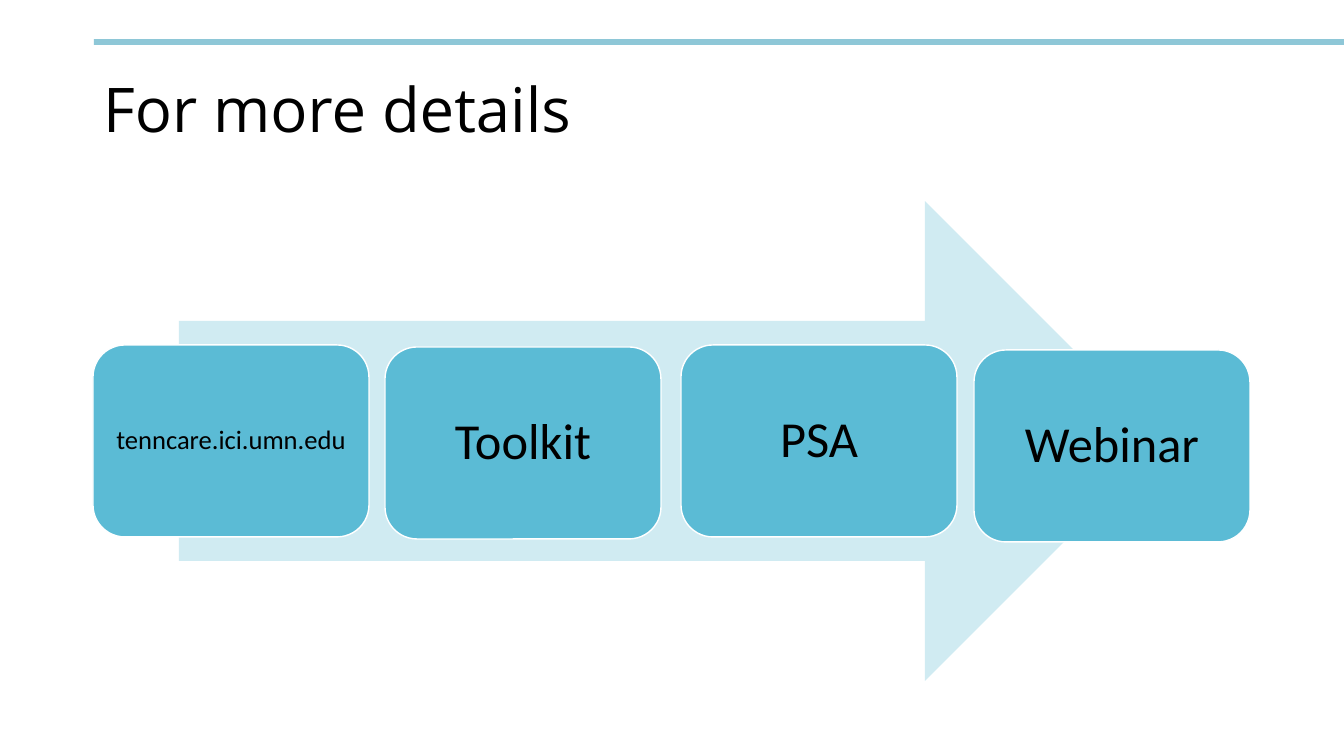
import pptx
import pptx.dml.color
import pptx.enum.shapes
import pptx.enum.text
import pptx.util

# Content: text, left, top, font size and text inset of each card
TITLE = "For more details"
CARDS = [
    ("tenncare.ici.umn.edu", 93, 345, 19, 8),
    ("Toolkit", 385, 347, 36, 15),
    ("PSA", 681, 345, 36, 15),
    ("Webinar", 974, 350, 36, 15),
]

# Layout in px: left, top, width, height
SLIDE_SIZE = (1344, 756)
RULE_BOX = (94, 39, 1250, 6)
TITLE_BOX = (93, 40, 1159, 146)
ARROW_BOX = (179, 201, 986, 480)
CARD_SIZE = (276, 192)

BLACK, WHITE = "000000", "FFFFFF"
RULE_COLOR, ARROW_COLOR, CARD_COLOR = "8EC7D7", "D0EBF2", "5BBBD5"
SHAPES = pptx.enum.shapes.MSO_SHAPE
ALIGN = pptx.enum.text.PP_ALIGN


def px(length):
    return pptx.util.Emu(round(length * 914400 / 100.8))


def color(hex_string):
    return pptx.dml.color.RGBColor.from_string(hex_string)


def add_shape(slide, kind, box, fill, line=None):
    shape = slide.shapes.add_shape(kind, *map(px, box))
    shape.shadow.inherit = False
    shape.fill.solid()
    shape.fill.fore_color.rgb = color(fill)
    if line:
        shape.line.color.rgb = color(line)
        shape.line.width = pptx.util.Pt(1)
    else:
        shape.line.fill.background()
    return shape


def write(shape, text, size, font, alignment):
    frame = shape.text_frame
    frame.word_wrap = True
    frame.auto_size = pptx.enum.text.MSO_AUTO_SIZE.NONE
    frame.vertical_anchor = pptx.enum.text.MSO_ANCHOR.MIDDLE
    paragraph = frame.paragraphs[0]
    paragraph.alignment = alignment
    paragraph.line_spacing = 0.9
    run = paragraph.add_run()
    run.text = text
    run.font.size = pptx.util.Pt(size)
    run.font.name = font
    run.font.color.rgb = color(BLACK)


def main():
    presentation = pptx.Presentation()
    presentation.slide_width, presentation.slide_height = map(px, SLIDE_SIZE)
    slide = presentation.slides.add_slide(presentation.slide_layouts[5])

    # Rule and title
    add_shape(slide, SHAPES.RECTANGLE, RULE_BOX, RULE_COLOR)
    title = slide.shapes.title
    title.left, title.top, title.width, title.height = map(px, TITLE_BOX)
    write(title, TITLE, 44, "Open Sans", ALIGN.LEFT)

    # Arrow behind the cards
    add_shape(slide, SHAPES.RIGHT_ARROW, ARROW_BOX, ARROW_COLOR)

    # Cards
    for text, left, top, size, inset in CARDS:
        card = add_shape(slide, SHAPES.ROUNDED_RECTANGLE,
                         (left, top, *CARD_SIZE), CARD_COLOR, WHITE)
        frame = card.text_frame
        frame.margin_left = frame.margin_right = px(inset)
        frame.margin_top = frame.margin_bottom = px(inset)
        write(card, text, size, "Calibri", ALIGN.CENTER)

    presentation.save("out.pptx")


if __name__ == "__main__":
    main()
